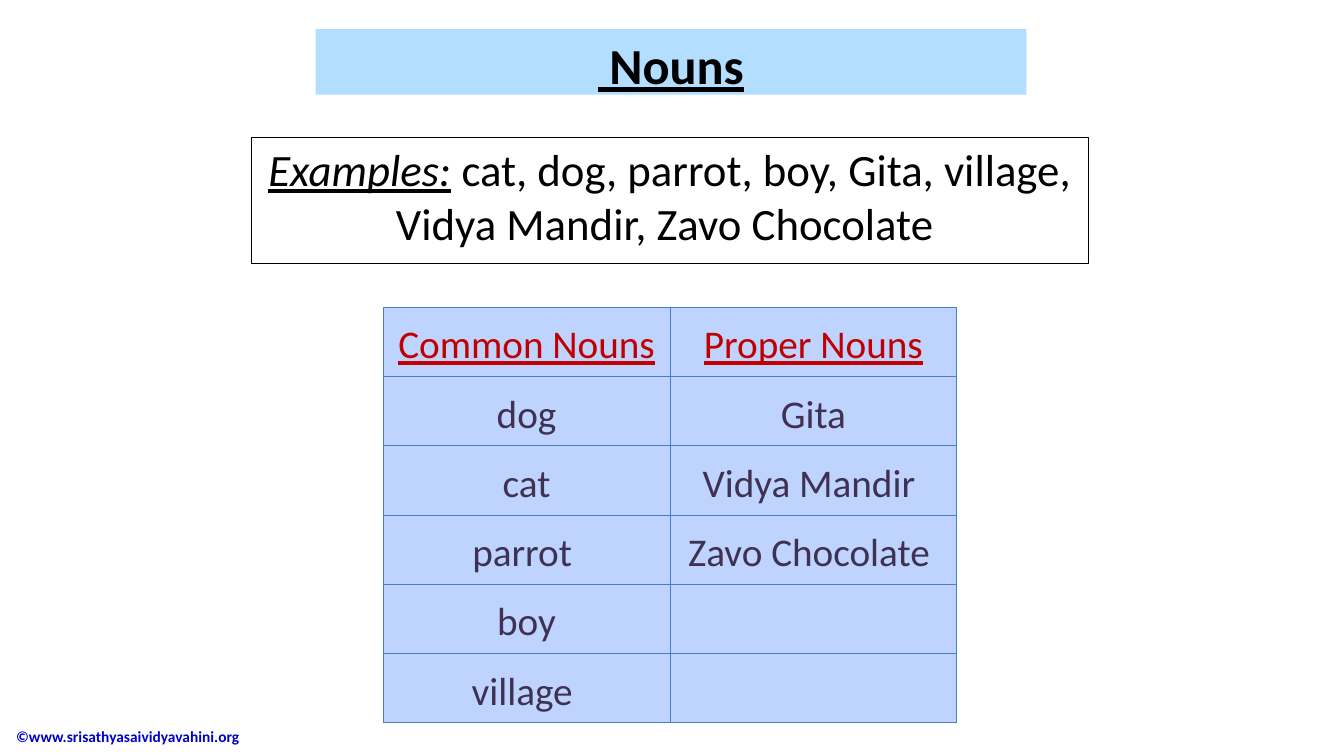
from dataclasses import dataclass

from lxml import etree
from pptx import Presentation
from pptx import util as u
from pptx.dml.color import RGBColor
from pptx.enum import shapes, text
from pptx.oxml.ns import qn


@dataclass(frozen=True)
class Theme:
    font: str = "Calibri"
    black: str = "000000"
    title_fill: str = "B3DEFF"
    cell_fill: str = "BFD3FF"
    cell_border: str = "4B7EBC"
    header: str = "C00000"
    body: str = "3F3151"
    footer: str = "0000CC"
    title_size: int = 36
    example_size: int = 32
    table_size: int = 28
    footer_size: int = 11
    line_width: float = 0.75


THEME = Theme()
NOUNS = [
    ("Common Nouns", "Proper Nouns"),
    ("dog", "Gita"),
    ("cat", "Vidya Mandir "),
    ("parrot ", "Zavo Chocolate "),
    ("boy", ""),
    ("village ", ""),
]


def add_run(p, words, size, color, bold=False, italic=False, underline=False):
    r = p.add_run()
    r.text = words
    font = r.font
    font.name = THEME.font
    font.size = u.Pt(size)
    font.color.rgb = RGBColor.from_string(color)
    font.bold, font.italic, font.underline = bold, italic, underline


def add_box(s, left, top, width, height, fill=None, line=None):
    sp = s.shapes.add_shape(
        shapes.MSO_SHAPE.RECTANGLE,
        u.Inches(left), u.Inches(top), u.Inches(width), u.Inches(height),
    )
    sp.shadow.inherit = False
    if fill:
        sp.fill.solid()
        sp.fill.fore_color.rgb = RGBColor.from_string(fill)
    else:
        sp.fill.background()
    if line:
        sp.line.color.rgb = RGBColor.from_string(line)
        sp.line.width = u.Pt(THEME.line_width)
    else:
        sp.line.fill.background()
    tf = sp.text_frame
    tf.word_wrap = True
    tf.vertical_anchor = text.MSO_ANCHOR.TOP
    p = tf.paragraphs[0]
    p.alignment = text.PP_ALIGN.CENTER
    return p


def add_footer(s, words):
    sp = s.shapes.add_textbox(
        u.Inches(-0.44), u.Inches(7.1), u.Inches(4.03), u.Inches(0.41)
    )
    tf = sp.text_frame
    tf.word_wrap = True
    tf.vertical_anchor = text.MSO_ANCHOR.MIDDLE
    tf.margin_left = u.Inches(0.6)
    add_run(tf.paragraphs[0], words, THEME.footer_size, THEME.footer, bold=True)


def set_borders(cell):
    props = cell._tc.get_or_add_tcPr()
    for position, side in enumerate(("lnL", "lnR", "lnT", "lnB")):
        ln = etree.Element(qn(f"a:{side}"), w=str(u.Pt(THEME.line_width)))
        fill = etree.SubElement(ln, qn("a:solidFill"))
        etree.SubElement(fill, qn("a:srgbClr"), val=THEME.cell_border)
        props.insert(position, ln)


def fill_cell(cell, words, is_header):
    cell.fill.solid()
    cell.fill.fore_color.rgb = RGBColor.from_string(THEME.cell_fill)
    set_borders(cell)
    cell.margin_left = cell.margin_right = u.Inches(0.07)
    cell.margin_top = cell.margin_bottom = u.Inches(0.07)
    if words:
        p = cell.text_frame.paragraphs[0]
        p.alignment = text.PP_ALIGN.CENTER
        p.line_spacing = 1.15
        color = THEME.header if is_header else THEME.body
        add_run(p, words, THEME.table_size, color, underline=is_header)


def add_noun_table(s, rows):
    table = s.shapes.add_table(
        len(rows), len(rows[0]),
        u.Inches(3.8), u.Inches(3.05), u.Inches(5.69), u.Inches(4.12),
    ).table
    for i, row in enumerate(rows):
        for j, words in enumerate(row):
            fill_cell(table.cell(i, j), words, i == 0)


def main():
    prs = Presentation()
    prs.slide_width, prs.slide_height = u.Inches(13.33), u.Inches(7.5)
    s = prs.slides.add_slide(prs.slide_layouts[6])

    add_footer(s, "©www.srisathyasaividyavahini.org")

    title = add_box(s, 3.13, 0.29, 7.05, 0.65, fill=THEME.title_fill)
    add_run(title, " Nouns", THEME.title_size, THEME.black, bold=True, underline=True)

    examples = add_box(s, 2.49, 1.36, 8.31, 1.25, line=THEME.black)
    add_run(examples, "Examples:", THEME.example_size, THEME.black,
            italic=True, underline=True)
    add_run(examples,
            " cat, dog, parrot, boy, Gita, village, Vidya Mandir, Zavo Chocolate ",
            THEME.example_size, THEME.black)

    add_noun_table(s, NOUNS)
    prs.save("out.pptx")


if __name__ == "__main__":
    main()
